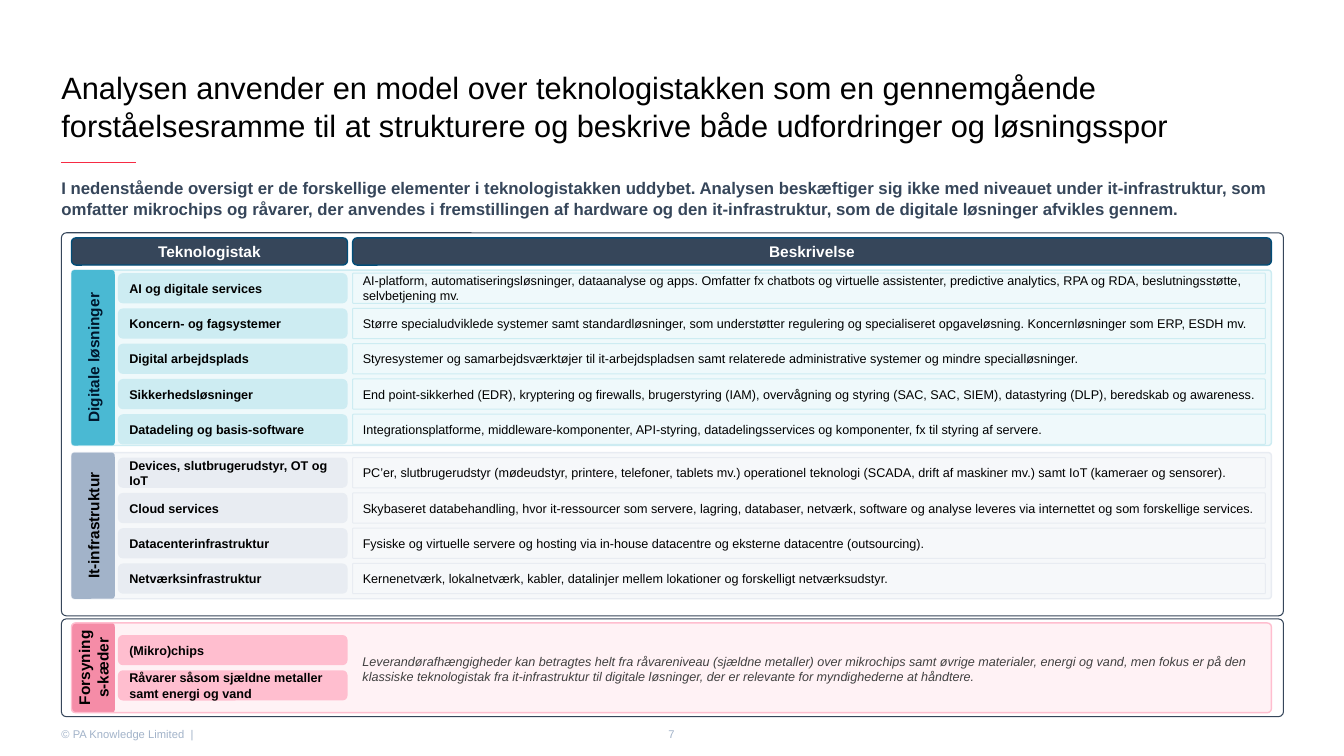
"""Builds a slide that describes the layers of the technology stack."""
from lxml import etree
from pptx import Presentation
from pptx.dml.color import RGBColor
from pptx.enum.shapes import MSO_CONNECTOR, MSO_SHAPE
from pptx.enum.text import MSO_ANCHOR, MSO_AUTO_SIZE, PP_ALIGN
from pptx.oxml.ns import qn
from pptx.util import Inches, Pt

TITLE = ("Analysen anvender en model over teknologistakken som en gennemgående "
         "forståelsesramme til at strukturere og beskrive både udfordringer og løsningsspor")
LEAD = ("I nedenstående oversigt er de forskellige elementer i teknologistakken uddybet. "
        "Analysen beskæftiger sig ikke med niveauet under it-infrastruktur, som omfatter "
        "mikrochips og råvarer, der anvendes i fremstillingen af hardware og den "
        "it-infrastruktur, som de digitale løsninger afvikles gennem.")
HEADERS = ("Teknologistak", "Beskrivelse")
DIGITAL = [
    ("AI og digitale services",
     "AI-platform, automatiseringsløsninger, dataanalyse og apps. Omfatter fx chatbots og "
     "virtuelle assistenter, predictive analytics, RPA og RDA, beslutningsstøtte, selvbetjening mv."),
    ("Koncern- og fagsystemer",
     "Større specialudviklede systemer samt standardløsninger, som understøtter regulering og "
     "specialiseret opgaveløsning. Koncernløsninger som ERP, ESDH mv."),
    ("Digital arbejdsplads",
     "Styresystemer og samarbejdsværktøjer til it-arbejdspladsen samt relaterede administrative "
     "systemer og mindre specialløsninger."),
    ("Sikkerhedsløsninger",
     "End point-sikkerhed (EDR), kryptering og firewalls, brugerstyring (IAM), overvågning og "
     "styring (SAC, SAC, SIEM), datastyring (DLP), beredskab og awareness."),
    ("Datadeling og basis-software",
     "Integrationsplatforme, middleware-komponenter, API-styring, datadelingsservices og "
     "komponenter, fx til styring af servere."),
]
INFRA = [
    ("Devices, slutbrugerudstyr, OT og IoT",
     "PC’er, slutbrugerudstyr (mødeudstyr, printere, telefoner, tablets mv.) operationel "
     "teknologi (SCADA, drift af maskiner mv.) samt IoT (kameraer og sensorer)."),
    ("Cloud services",
     "Skybaseret databehandling, hvor it-ressourcer som servere, lagring, databaser, netværk, "
     "software og analyse leveres via internettet og som forskellige services."),
    ("Datacenterinfrastruktur",
     "Fysiske og virtuelle servere og hosting via in-house datacentre og eksterne datacentre "
     "(outsourcing)."),
    ("Netværksinfrastruktur",
     "Kernenetværk, lokalnetværk, kabler, datalinjer mellem lokationer og forskelligt netværksudstyr."),
]
SUPPLY = [("(Mikro)chips", None), ("Råvarer såsom sjældne metaller samt energi og vand", None)]
SUPPLY_LABEL = "Forsynings-kæder"
SUPPLY_NOTE = ("Leverandørafhængigheder kan betragtes helt fra råvareniveau (sjældne metaller) over "
               "mikrochips samt øvrige materialer, energi og vand, men fokus er på den klassiske "
               "teknologistak fra it-infrastruktur til digitale løsninger, der er relevante for "
               "myndighederne at håndtere.")
COPYRIGHT = "© PA Knowledge Limited  |"
PAGE = "7"

BLACK, WHITE = RGBColor(0, 0, 0), RGBColor(255, 255, 255)
NAVY, EDGE, INK = RGBColor(0x36, 0x46, 0x5A), RGBColor(0x02, 0x4D, 0x78), RGBColor(0, 0x17, 0x2D)
TEAL, PALE_TEAL = RGBColor(0x4A, 0xB9, 0xD3), RGBColor(0xCD, 0xEC, 0xF2)
STEEL, PALE_STEEL = RGBColor(0xA2, 0xB3, 0xC9), RGBColor(0xE8, 0xEC, 0xF2)
ROSE, PALE_ROSE = RGBColor(0xF3, 0x80, 0x9E), RGBColor(0xFF, 0xBE, 0xCF)
RED, GREY = RGBColor(0xF6, 0x2B, 0x44), RGBColor(0x40, 0x40, 0x40)

ROUND, STRAIGHT = MSO_SHAPE.ROUNDED_RECTANGLE, MSO_CONNECTOR.STRAIGHT
LEFT, CENTER = PP_ALIGN.LEFT, PP_ALIGN.CENTER
TOP, MIDDLE, BOTTOM = MSO_ANCHOR.TOP, MSO_ANCHOR.MIDDLE, MSO_ANCHOR.BOTTOM
NO_FIT = MSO_AUTO_SIZE.NONE

FRAME_X, FRAME_W = 0.61, 12.13
TAB_X, TAB_W, PANEL_W = 0.71, 0.43, 11.91
NAME_X, NAME_W = 1.17, 2.28
DESC_X, DESC_W = 3.5, 9.06
ROW_H, ROW_STEP = 0.3, 0.35

GROUPS = [
    ("Digitale løsninger", DIGITAL, TEAL, PALE_TEAL, INK, 30, 2.68, 1.74, 2.71),
    ("It-infrastruktur", INFRA, STEEL, PALE_STEEL, BLACK, 35, 4.49, 1.45, 4.54),
    (None, SUPPLY, ROSE, PALE_ROSE, BLACK, 20, 6.18, 0.89, 6.3),
]
FRAMES = [(2.31, 3.8), (6.14, 0.97)]

prs = Presentation()
prs.slide_width, prs.slide_height = Inches(13.34), Inches(7.5)
s = prs.slides.add_slide(prs.slide_layouts[5])


def write(sp, text, size, color, align=LEFT, anchor=MIDDLE, insets=(0.1, 0.05, 0.1, 0.05),
          vertical=False, spacing=1.0, **styles):
    tf = sp.text_frame
    sides = ("margin_left", "margin_top", "margin_right", "margin_bottom")
    layout = dict(zip(sides, map(Inches, insets)), word_wrap=True, auto_size=NO_FIT,
                  vertical_anchor=anchor)
    for key, value in layout.items():
        setattr(tf, key, value)
    if vertical:
        tf._txBody.bodyPr.set("vert", "vert270")
    p = tf.paragraphs[0]
    p.alignment, p.line_spacing = align, spacing
    r = p.add_run()
    r.text = text
    for key, value in dict(styles, name="Arial", size=Pt(size)).items():
        setattr(r.font, key, value)
    r.font.color.rgb = color


def textbox(box, text, size, color, **layout):
    write(s.shapes.add_textbox(*map(Inches, box)), text, size, color, **layout)


def rounded(box, radius=None, fill=None, alpha=None, line=None, width=1.0):
    sp = s.shapes.add_shape(ROUND, *map(Inches, box))
    sp.shadow.inherit = False
    if radius:
        sp.adjustments[0] = radius / min(box[2:])
    if fill is None:
        sp.fill.background()
    else:
        sp.fill.solid()
        sp.fill.fore_color.rgb = fill
    if alpha:
        clr = sp.fill._xPr.find(qn("a:solidFill"))[0]
        etree.SubElement(clr, qn("a:alpha")).set("val", str(alpha * 1000))
    if line is None:
        sp.line.fill.background()
    else:
        sp.line.color.rgb, sp.line.width = line, Pt(width)
    return sp


def add_group(label, rows, strong, pale, ink, alpha, top, height, first_row):
    tab_box = (TAB_X, top, TAB_W, height)
    panel = dict(radius=0.04 if label is None else 0.03, fill=pale, alpha=alpha, line=pale)
    if label is None:
        rounded(tab_box, 0.03, strong)
    rounded((TAB_X, top, PANEL_W, height), **panel)
    if label:
        write(rounded(tab_box, 0.03, strong), label, 11, ink, align=CENTER,
              vertical=True, bold=True)
    for i, (name, description) in enumerate(rows):
        y = first_row + i * ROW_STEP
        write(rounded((NAME_X, y, NAME_W, ROW_H), fill=pale), name, 9, BLACK, bold=True)
        if description:
            sp = rounded((DESC_X, y, DESC_W, ROW_H), 0.01, line=pale, width=0.75)
            write(sp, description, 9, BLACK)


title = s.shapes.title
title.left, title.top, title.width, title.height = map(Inches, (FRAME_X, 0.56, FRAME_W, 0.87))
write(title, TITLE, 22, BLACK, anchor=BOTTOM, insets=(0, 0, 0.11, 0), spacing=1.05)

rule = s.shapes.add_connector(STRAIGHT, *map(Inches, (FRAME_X, 1.61, 1.35, 1.61)))
rule.line.color.rgb, rule.line.width = RED, Pt(1)
etree.SubElement(rule._element.spPr, qn("a:effectLst"))

textbox((FRAME_X, 1.75, FRAME_W, 0.5), LEAD, 12, NAVY, anchor=TOP, insets=(0, 0, 0, 0),
        spacing=1.05, bold=True)

panel_right = TAB_X + PANEL_W
header_spans = [(TAB_X, NAME_X + NAME_W), (DESC_X, panel_right)]
for text, (x, right) in zip(HEADERS, header_spans):
    sp = rounded((x, 2.36, right - x, 0.27), fill=NAVY, line=EDGE)
    write(sp, text, 11, WHITE, align=CENTER, bold=True)

for group in GROUPS:
    add_group(*group)
for y, h in FRAMES:
    rounded((FRAME_X, y, FRAME_W, h), 0.05, line=NAVY, width=0.75)

textbox((TAB_X, 6.12, TAB_W, 1.01), SUPPLY_LABEL, 11, BLACK, align=CENTER, vertical=True, bold=True)
textbox((DESC_X, 6.44, DESC_W, 0.4), SUPPLY_NOTE, 9, GREY, anchor=TOP, italic=True)
textbox((FRAME_X, 7.17, 1.38, 0.24), COPYRIGHT, 8, STEEL, anchor=TOP, insets=(0, 0.05, 0, 0.05))
textbox((6.47, 7.17, 0.39, 0.23), PAGE, 8, STEEL, align=CENTER, insets=(0, 0.06, 0, 0.06))

prs.save("out.pptx")
